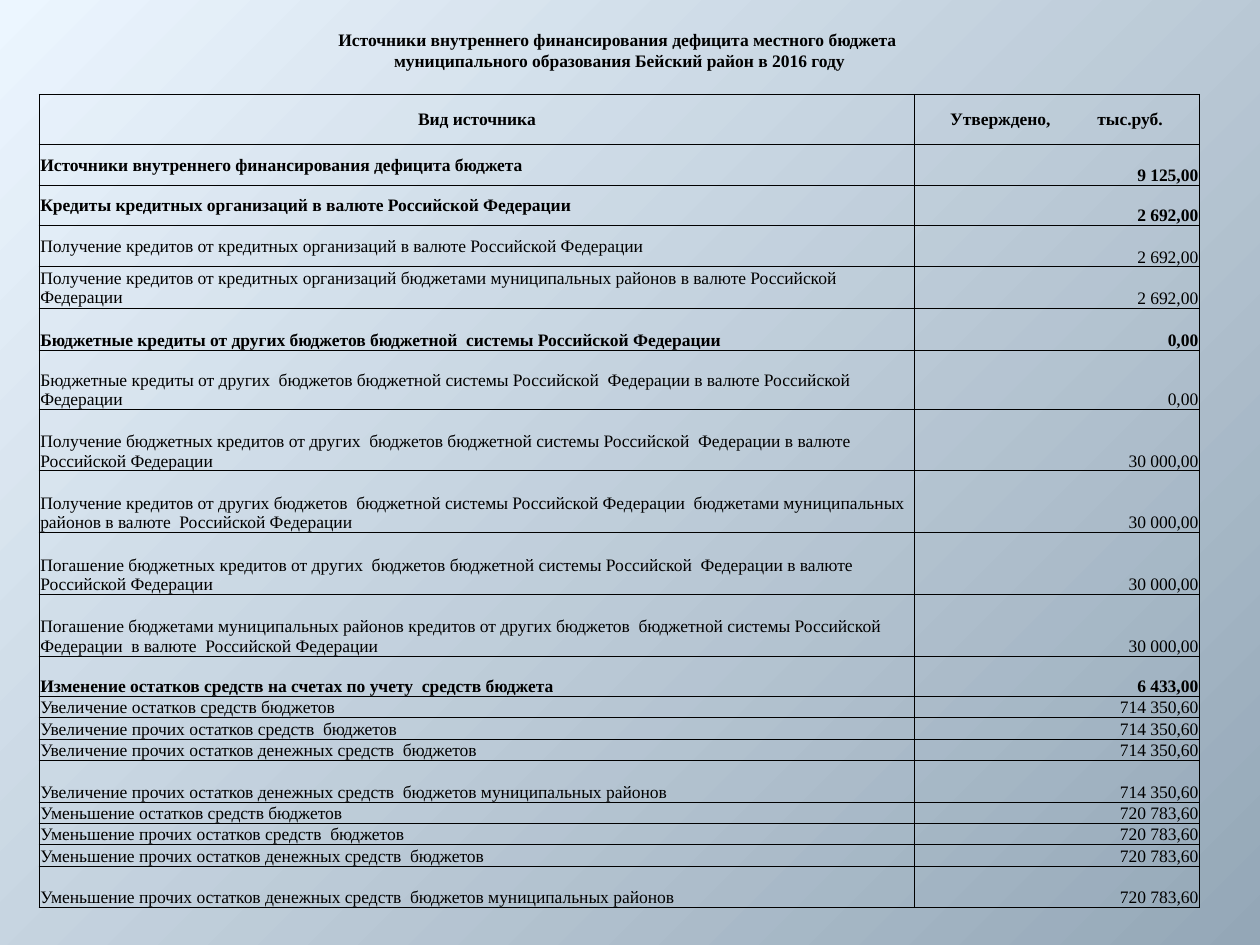
"""Build a slide with the sources of financing of a district budget deficit."""
from dataclasses import dataclass

import lxml.etree
import pptx
import pptx.dml.color
import pptx.enum.text
import pptx.oxml.ns
import pptx.util

Inches = pptx.util.Inches
ALIGN = pptx.enum.text.PP_ALIGN
ANCHOR = pptx.enum.text.MSO_ANCHOR
qualified = pptx.oxml.ns.qn


@dataclass(frozen=True)
class Theme:
    """Colours, type and line sizes of the slide."""
    font: str = "Times New Roman"
    size: int = 10
    text: str = "000000"
    border: str = "000000"
    border_width: float = 0.5
    background_start: str = "ECF6FF"
    background_end: str = "94A7B7"


THEME = Theme()
PLAIN_TABLE_STYLE = "{2D5ABB26-0587-4C30-8999-92F81FD0307C}"
COLUMN_WIDTHS = (6.95, 2.26)
LINE_HEIGHT = 0.17
HEADER_HEIGHT = 0.4
HEADER_TABS = (0.27, 1.44)
ALL_SIDES = ("lnL", "lnR", "lnT", "lnB")

TITLE_LINES = (
    "Источники внутреннего финансирования дефицита местного бюджета ",
    "муниципального образования Бейский район в 2016 году",
)
HEADERS = ("Вид источника", "\tУтверждено,\tтыс.руб.")

# Each row holds: source, amount, height, bold, anchor of the source.
ROWS = (
    ("Источники внутреннего финансирования дефицита бюджета", "9 125,00", 0.32, True, ANCHOR.MIDDLE),
    ("Кредиты кредитных организаций в валюте Российской Федерации", "2 692,00", 0.32, True, ANCHOR.MIDDLE),
    ("Получение кредитов от кредитных организаций в валюте Российской Федерации",
     "2 692,00", 0.33, False, ANCHOR.MIDDLE),
    ("Получение кредитов от кредитных организаций бюджетами муниципальных районов "
     "в валюте Российской Федерации", "2 692,00", 0.33, False, ANCHOR.MIDDLE),
    ("Бюджетные кредиты от других бюджетов бюджетной  системы Российской Федерации",
     "0,00", 0.33, True, ANCHOR.BOTTOM),
    ("Бюджетные кредиты от других  бюджетов бюджетной системы Российской  Федерации "
     "в валюте Российской Федерации", "0,00", 0.47, False, ANCHOR.BOTTOM),
    ("Получение бюджетных кредитов от других  бюджетов бюджетной системы Российской  Федерации "
     "в валюте Российской Федерации", "30 000,00", 0.49, False, ANCHOR.BOTTOM),
    ("Получение кредитов от других бюджетов  бюджетной системы Российской Федерации  бюджетами "
     "муниципальных районов в валюте  Российской Федерации", "30 000,00", 0.49, False, ANCHOR.BOTTOM),
    ("Погашение бюджетных кредитов от других  бюджетов бюджетной системы Российской  Федерации "
     "в валюте Российской Федерации", "30 000,00", 0.49, False, ANCHOR.BOTTOM),
    ("Погашение бюджетами муниципальных районов кредитов от других бюджетов  бюджетной системы "
     "Российской Федерации  в валюте  Российской Федерации", "30 000,00", 0.49, False, ANCHOR.BOTTOM),
    ("Изменение остатков средств на счетах по учету  средств бюджета", "6 433,00", 0.32, True, ANCHOR.BOTTOM),
    ("Увеличение остатков средств бюджетов", "714 350,60", LINE_HEIGHT, False, ANCHOR.BOTTOM),
    ("Увеличение прочих остатков средств  бюджетов", "714 350,60", LINE_HEIGHT, False, ANCHOR.BOTTOM),
    ("Увеличение прочих остатков денежных средств  бюджетов", "714 350,60", LINE_HEIGHT, False, ANCHOR.BOTTOM),
    ("Увеличение прочих остатков денежных средств  бюджетов муниципальных районов",
     "714 350,60", 0.33, False, ANCHOR.BOTTOM),
    ("Уменьшение остатков средств бюджетов", "720 783,60", LINE_HEIGHT, False, ANCHOR.BOTTOM),
    ("Уменьшение прочих остатков средств  бюджетов", "720 783,60", LINE_HEIGHT, False, ANCHOR.BOTTOM),
    ("Уменьшение прочих остатков денежных средств  бюджетов", "720 783,60", LINE_HEIGHT, False, ANCHOR.BOTTOM),
    ("Уменьшение прочих остатков денежных средств  бюджетов муниципальных районов",
     "720 783,60", 0.33, False, ANCHOR.BOTTOM),
)


def set_background(slide):
    """Fill the background with a gradient that spreads from the top left corner."""
    fill = slide.background.fill
    fill.gradient()
    for stop, color in zip(fill.gradient_stops, (THEME.background_start, THEME.background_end)):
        stop.color.rgb = pptx.dml.color.RGBColor.from_string(color)
    gradient = next(slide.element.iter(qualified("a:gradFill")))
    gradient.remove(gradient.find(qualified("a:lin")))
    spread = lxml.etree.SubElement(gradient, qualified("a:path"), path="circle")
    lxml.etree.SubElement(spread, qualified("a:fillToRect"), r="100000", b="100000")


def set_borders(cell, sides):
    """Draw thin solid lines on the given sides of a cell."""
    properties = cell._tc.get_or_add_tcPr()
    for side in sides:
        line = lxml.etree.SubElement(
            properties, qualified(f"a:{side}"), w=str(pptx.util.Pt(THEME.border_width)))
        solid = lxml.etree.SubElement(line, qualified("a:solidFill"))
        lxml.etree.SubElement(solid, qualified("a:srgbClr"), val=THEME.border)


def set_tabs(paragraph, positions):
    """Add left tab stops to a paragraph."""
    tabs = lxml.etree.SubElement(paragraph._p.get_or_add_pPr(), qualified("a:tabLst"))
    for position in positions:
        lxml.etree.SubElement(tabs, qualified("a:tab"), pos=str(Inches(position)), algn="l")


def style_cell(cell, sides):
    """Give a cell its borders, narrow margins, no fill and a small empty line."""
    set_borders(cell, sides)
    cell.fill.background()
    cell.margin_left = cell.margin_right = cell.margin_top = Inches(0.01)
    cell.margin_bottom = 0
    ending = cell.text_frame.paragraphs[0]._p.get_or_add_endParaRPr()
    ending.set("sz", str(THEME.size * 100))


def write_cell(cell, text, align, anchor, bold):
    """Write one formatted paragraph into a cell."""
    cell.vertical_anchor = anchor
    paragraph = cell.text_frame.paragraphs[0]
    paragraph.text = text
    paragraph.alignment = align
    for run in paragraph.runs:
        run.font.name = THEME.font
        run.font.size = pptx.util.Pt(THEME.size)
        run.font.bold = bold
        run.font.color.rgb = pptx.dml.color.RGBColor.from_string(THEME.text)


def add_plain_table(slide, heights):
    """Add a table without banding and set its column widths and row heights."""
    frame = slide.shapes.add_table(
        len(heights), len(COLUMN_WIDTHS), Inches(0.31), Inches(0.23),
        Inches(sum(COLUMN_WIDTHS)), Inches(sum(heights)))
    table = frame.table
    table.first_row = table.horz_banding = False
    next(table._tbl.iter(qualified("a:tableStyleId"))).text = PLAIN_TABLE_STYLE
    for column, width in zip(table.columns, COLUMN_WIDTHS):
        column.width = Inches(width)
    for row, height in zip(table.rows, heights):
        row.height = Inches(height)
    return table


def add_budget_table(slide):
    """Add the table with its title lines, header and amounts."""
    gap_row = len(TITLE_LINES)
    header_row = gap_row + 1
    heights = [LINE_HEIGHT] * header_row + [HEADER_HEIGHT] + [row[2] for row in ROWS]
    table = add_plain_table(slide, heights)
    for index, row in enumerate(table.rows):
        sides = () if index < gap_row else ("lnB",) if index == gap_row else ALL_SIDES
        for cell in row.cells:
            style_cell(cell, sides)
    for index, line in enumerate(TITLE_LINES):
        table.cell(index, 0).merge(table.cell(index, 1))
        write_cell(table.cell(index, 0), line, ALIGN.CENTER, ANCHOR.BOTTOM, True)
    for column, (text, align) in enumerate(zip(HEADERS, (ALIGN.CENTER, ALIGN.LEFT))):
        write_cell(table.cell(header_row, column), text, align, ANCHOR.MIDDLE, True)
    set_tabs(table.cell(header_row, 1).text_frame.paragraphs[0], HEADER_TABS)
    for index, (source, amount, _, bold, anchor) in enumerate(ROWS, header_row + 1):
        write_cell(table.cell(index, 0), source, ALIGN.LEFT, anchor, bold)
        write_cell(table.cell(index, 1), amount, ALIGN.RIGHT, ANCHOR.BOTTOM, bold)


def main():
    """Build and save the presentation."""
    presentation = pptx.Presentation()
    presentation.slide_width = Inches(10)
    presentation.slide_height = Inches(7.5)
    slide = presentation.slides.add_slide(presentation.slide_layouts[6])
    set_background(slide)
    add_budget_table(slide)
    presentation.save("out.pptx")


if __name__ == "__main__":
    main()
